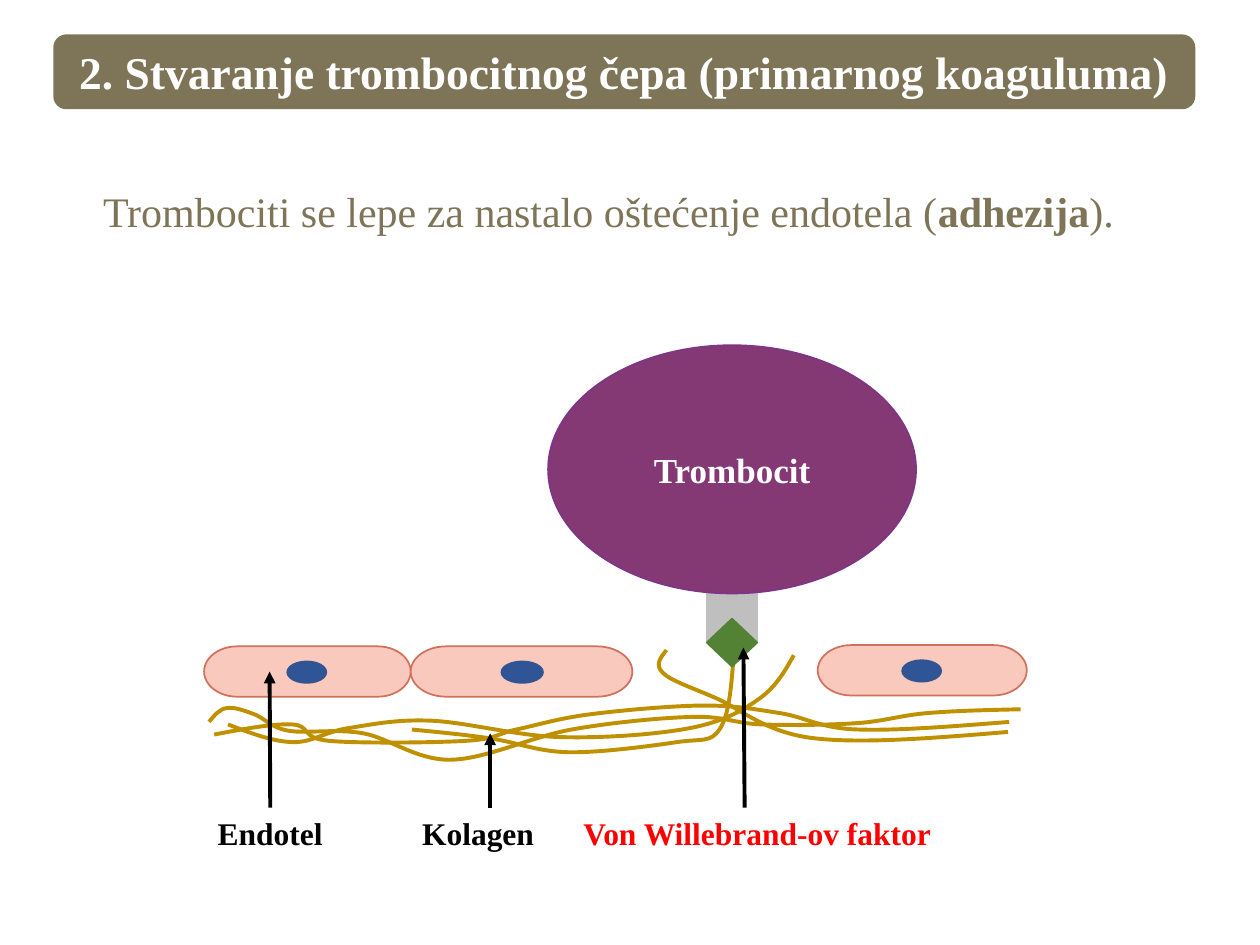
import pptx
import pptx.util
import pptx.oxml.ns
import pptx.oxml.xmlchemy
import pptx.dml.color
import pptx.enum.shapes
import pptx.enum.text

Kind = pptx.enum.shapes.MSO_SHAPE
Align = pptx.enum.text.PP_ALIGN
qn = pptx.oxml.ns.qn

theme = {
    "font": "Times New Roman",
    "olive": "7E7559", "white": "FFFFFF", "black": "000000", "red": "FF0000",
    "cell": "FAC9BE", "rim": "CF725B", "core": "2F5597", "edge": "325491",
    "fiber": "BF9000", "stem": "BFBFBF", "factor": "548235",
    "plate": "843874", "plate rim": "7E3587",
    "title": 26, "body": 24, "plate text": 20, "label": 18,
    "thin": 1, "thick": 2.25,
}

deck = pptx.Presentation()
deck.slide_width = pptx.util.Inches(10)
deck.slide_height = pptx.util.Inches(7.5)
slide = deck.slides.add_slide(deck.slide_layouts[6])

# The grid has 100 columns and 75 rows of square units.
unit = deck.slide_width / 100


def put(home, kind, box, fill, rim):
    """Add a filled preset shape; box is left, top, width, height in grid units."""
    shape = home.add_shape(kind, *[round(n * unit) for n in box])
    shape.shadow.inherit = False
    shape.fill.solid()
    shape.fill.fore_color.rgb = pptx.dml.color.RGBColor.from_string(theme[fill])
    shape.line.color.rgb = pptx.dml.color.RGBColor.from_string(theme[rim])
    shape.line.width = pptx.util.Pt(theme["thin"])
    return shape


def write(shape, runs, size, color, align=Align.CENTER):
    """Fill a shape with one paragraph of (words, bold) runs."""
    shape.text_frame.word_wrap = True
    para = shape.text_frame.paragraphs[0]
    para.alignment = align
    for words, bold in runs:
        run = para.add_run()
        run.text = words
        run.font.name = theme["font"]
        run.font.size = pptx.util.Pt(theme[size])
        run.font.bold = bold
        run.font.color.rgb = pptx.dml.color.RGBColor.from_string(theme[color])


# Title and statement
title = put(slide.shapes, Kind.ROUNDED_RECTANGLE, (4.3, 2.8, 90.5, 5.8), "olive", "olive")
title.text_frame.vertical_anchor = pptx.enum.text.MSO_ANCHOR.MIDDLE
write(title, [("2. Stvaranje trombocitnog čepa (primarnog koaguluma)", True)], "title", "white")

body = slide.shapes.add_textbox(*[round(n * unit) for n in (7.2, 14.2, 87.6, 5)])
write(body, [("Trombociti se lepe za nastalo oštećenje endotela (", False),
             ("adhezija", True), (").", False)], "body", "olive", Align.LEFT)

scene = slide.shapes.add_group_shape().shapes

# Endothelial cells: left, top, width, then the left and width of the nucleus
cells = [(16.2, 51.3, 16.4, 22.8, 3.1),
         (64.9, 51.2, 16.6, 71.6, 3.1),
         (32.6, 51.3, 17.6, 39.8, 3.3)]
for left, top, wide, mid, span in cells:
    put(scene, Kind.FLOWCHART_TERMINATOR, (left, top, wide, 4), "cell", "rim")
    put(scene, Kind.OVAL, (mid, top + 1.2, span, 1.7), "core", "edge")

# Collagen fibers, each a smooth curve through its knots
fibers = [
    [(63, 52), (60.2, 55.5), (54.7, 57.8), (44.4, 58.5), (34.2, 57.2),
     (27.6, 57.8), (23.2, 58.9), (18.1, 57.5)],
    [(80.1, 57.3), (68, 57.9), (61.9, 56.6), (55.8, 56), (46.8, 56.7),
     (41, 57.9), (37, 58.8), (26.1, 58.8), (23.2, 57.5), (17, 58.3)],
    [(16.6, 57.3), (18, 56.2), (20.2, 56.7), (22.9, 58), (28.8, 58.2),
     (35.8, 60.3), (45.4, 57.9), (55, 56.9), (60.4, 57.5), (68, 57.4),
     (73.6, 56.6), (81, 56.3)],
    [(80, 58.1), (64.6, 58.6), (56.8, 55.4), (52.6, 53.4), (52.9, 51.6)],
    [(32.7, 57.9), (38.9, 58.6), (45.1, 59.7), (53.7, 58.9), (57.1, 57.9),
     (58.2, 52.4)],
]
for knots in fibers:
    last = len(knots) - 1
    # A handle at an inner knot is a sixth of the step between its neighbours.
    slope = [tuple((b - a) / 6 for a, b in zip(knots[max(i - 1, 0)], knots[min(i + 1, last)]))
             for i in range(last + 1)]
    points = []
    for i in range(last):
        (x, y), (u, v) = knots[i], knots[i + 1]
        one = (x + slope[i][0], y + slope[i][1])
        two = (u - slope[i + 1][0], v - slope[i + 1][1])
        if i == 0:
            one = ((x + two[0]) / 2, (y + two[1]) / 2)
        if i == last - 1:
            two = ((u + one[0]) / 2, (v + one[1]) / 2)
        points += [one, two, (u, v)]
    pen = scene.build_freeform(round(knots[0][0] * unit), round(knots[0][1] * unit))
    pen.add_line_segments([(round(x * unit), round(y * unit)) for x, y in points], close=False)
    fiber = pen.convert_to_shape()
    fiber.shadow.inherit = False
    fiber.fill.background()
    fiber.line.color.rgb = pptx.dml.color.RGBColor.from_string(theme["fiber"])
    fiber.line.width = pptx.util.Pt(theme["thick"])
    # Every three straight steps become one cubic curve.
    steps = list(fiber.element.iter(qn("a:lnTo")))
    for i in range(0, len(steps), 3):
        curve = pptx.oxml.xmlchemy.OxmlElement("a:cubicBezTo")
        steps[i].addprevious(curve)
        for step in steps[i:i + 3]:
            curve.append(step[0])
            step.getparent().remove(step)

# Platelet with its receptor and the binding factor
put(scene, Kind.RECTANGLE, (56.1, 43.1, 4, 7.8), "stem", "stem")
put(scene, Kind.DIAMOND, (56.1, 49.1, 4, 3.8), "factor", "factor")
plate = put(scene, Kind.OVAL, (43.5, 27.4, 29.2, 19.7), "plate", "plate rim")
plate.text_frame.vertical_anchor = pptx.enum.text.MSO_ANCHOR.MIDDLE
write(plate, [("Trombocit", True)], "plate text", "white")

# Labels with arrows: words, color, left, width, arrow foot x, arrow tip
floor = 64.1
labels = [("Endotel", "black", 11.8, 19.3, 21.4, (21.4, 53.3)),
          ("Kolagen", "black", 28.3, 19.3, 38.9, (38.9, 58.2)),
          ("Von Willebrand-ov faktor", "red", 39.2, 41.8, 59.1, (59, 51.4))]
for words, color, left, wide, foot, tip in labels:
    label = scene.add_textbox(*[round(n * unit) for n in (left, floor, wide, 5.9)])
    write(label, [(words, True)], "label", color)
    arrow = scene.add_connector(pptx.enum.shapes.MSO_CONNECTOR.STRAIGHT,
                                *[round(n * unit) for n in (foot, floor, *tip)])
    if abs(left + wide / 2 - foot) < 0.1:
        arrow.begin_connect(label, 0)
    arrow.line.color.rgb = pptx.dml.color.RGBColor.from_string(theme["black"])
    arrow.line.width = pptx.util.Pt(theme["thick"])
    head = pptx.oxml.xmlchemy.OxmlElement("a:tailEnd")
    head.set("type", "triangle")
    arrow.element.spPr.find(qn("a:ln")).append(head)
    arrow.element.spPr.append(pptx.oxml.xmlchemy.OxmlElement("a:effectLst"))

deck.save("out.pptx")
